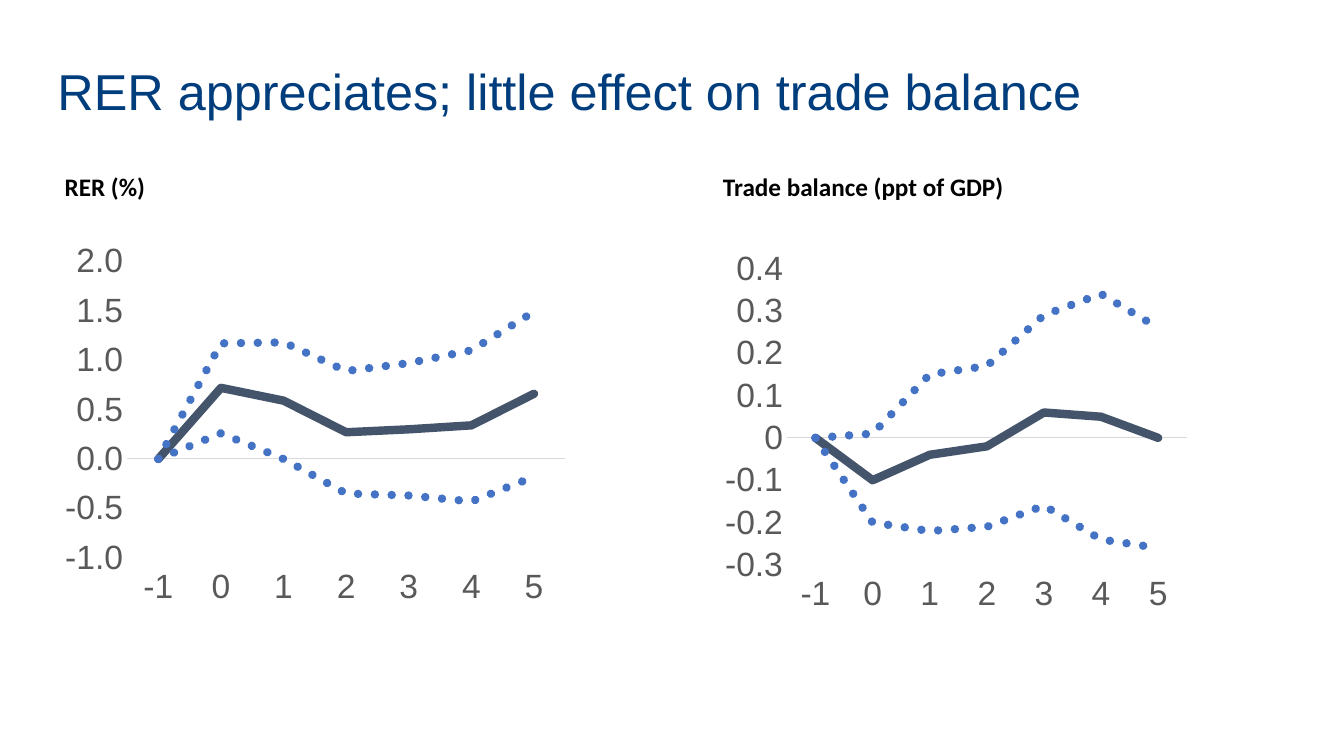
import pptx
import pptx.chart.data
import pptx.dml.color
import pptx.enum.chart
import pptx.enum.dml
import pptx.enum.text
import pptx.util
from pptx.util import Cm, Pt

COLOURS = {"title": "003D7C", "label": "000000", "axis": "595959",
           "baseline": "D9D9D9", "estimate": "44546A", "band": "4472C4"}
TITLE = "RER appreciates; little effect on trade balance"
YEARS = ["-1", "0", "1", "2", "3", "4", "5"]
SERIES_COLOURS = ["estimate", "band", "band"]

# Boxes are left, top, width, height in cm
PANELS = [
    {"heading": "RER (%)",
     "heading_box": (1.38, 4.19, 9.53, 1.02),
     "chart_box": (1.38, 5.92, 13.13, 9.53),
     "number_format": "#,##0.0",
     "series": [(0, 0.72, 0.59, 0.27, 0.3, 0.34, 0.66),
                (0, 0.26, 0, -0.35, -0.37, -0.43, -0.18),
                (0, 1.17, 1.18, 0.89, 0.97, 1.1, 1.49)]},
    {"heading": "Trade balance (ppt of GDP)",
     "heading_box": (17.97, 4.19, 10.92, 1.02),
     "chart_box": (18.03, 6.1, 12.12, 9.53),
     "number_format": "General",
     "series": [(0, -0.1, -0.04, -0.02, 0.06, 0.05, 0),
                (0, -0.2, -0.22, -0.21, -0.16, -0.24, -0.26),
                (0, 0.01, 0.15, 0.17, 0.29, 0.34, 0.26)]},
]


def rgb(name):
    return pptx.dml.color.RGBColor.from_string(COLOURS[name])


def set_font(font, size, colour, name="Arial", bold=False):
    font.size = Pt(size)
    font.color.rgb = rgb(colour)
    font.name = name
    font.bold = bold


def add_text(slide, text, box, *, size, colour, name="Arial", bold=False,
             anchor=pptx.enum.text.MSO_ANCHOR.TOP, line_spacing=None):
    frame = slide.shapes.add_textbox(*map(Cm, box)).text_frame
    frame.word_wrap = True
    frame.vertical_anchor = anchor
    paragraph = frame.paragraphs[0]
    paragraph.line_spacing = line_spacing
    run = paragraph.add_run()
    run.text = text
    set_font(run.font, size, colour, name, bold)


def style_series(series, colour):
    """Draw a thick line with round ends; the confidence band is dotted."""
    series.smooth = False
    series.marker.style = pptx.enum.chart.XL_MARKER_STYLE.NONE
    line = series.format.line
    line.color.rgb = rgb(colour)
    line.width = Pt(6)
    if colour == "band":
        line.dash_style = pptx.enum.dml.MSO_LINE.ROUND_DOT
    outline = series._element.xpath("c:spPr/a:ln")[0]
    outline.set("cap", "rnd")
    outline.append(pptx.oxml.parse_xml(
        '<a:round xmlns:a="http://schemas.openxmlformats.org/drawingml/2006/main"/>'))


def style_axes(chart, number_format):
    years, values = chart.category_axis, chart.value_axis
    for axis in (years, values):
        axis.has_major_gridlines = False
        axis.major_tick_mark = pptx.enum.chart.XL_TICK_MARK.NONE
        axis.minor_tick_mark = pptx.enum.chart.XL_TICK_MARK.NONE
        set_font(axis.tick_labels.font, 24, "axis")
    years.tick_label_position = pptx.enum.chart.XL_TICK_LABEL_POSITION.LOW
    years.format.line.color.rgb = rgb("baseline")
    years.format.line.width = Pt(0.75)
    values.format.line.fill.background()
    values.tick_labels.number_format = number_format
    values.tick_labels.number_format_is_linked = False


def add_line_chart(slide, panel):
    chart_data = pptx.chart.data.CategoryChartData()
    chart_data.categories = YEARS
    for number, values in enumerate(panel["series"], start=1):
        chart_data.add_series(f"Series {number}", values)
    chart = slide.shapes.add_chart(
        pptx.enum.chart.XL_CHART_TYPE.LINE,
        *map(Cm, panel["chart_box"]), chart_data).chart
    chart.has_legend = False
    chart.has_title = False
    set_font(chart.font, 24, "label")
    chart.plots[0].vary_by_categories = False
    style_axes(chart, panel["number_format"])
    for series, colour in zip(chart.plots[0].series, SERIES_COLOURS):
        style_series(series, colour)


def main():
    deck = pptx.Presentation()
    deck.slide_width, deck.slide_height = Cm(33.87), Cm(19.05)
    slide = deck.slides.add_slide(deck.slide_layouts[6])
    add_text(slide, TITLE, (1.2, 0.53, 31.47, 3.68), size=36, colour="title",
             anchor=pptx.enum.text.MSO_ANCHOR.MIDDLE, line_spacing=0.9)
    for panel in PANELS:
        add_text(slide, panel["heading"], panel["heading_box"],
                 size=18, colour="label", name="Calibri", bold=True)
        add_line_chart(slide, panel)
    deck.save("out.pptx")


if __name__ == "__main__":
    main()
